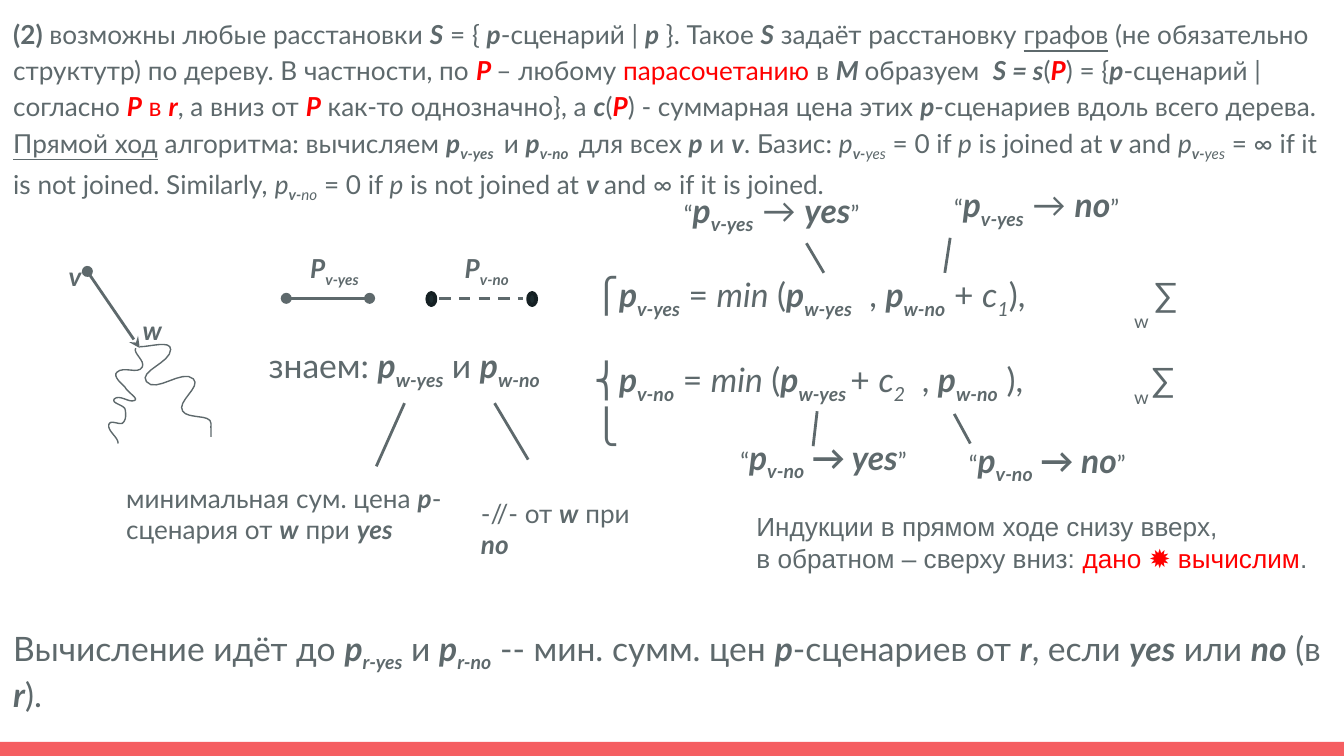
from dataclasses import dataclass

from lxml import etree
from pptx import Presentation
from pptx.dml.color import RGBColor
from pptx.enum.dml import MSO_LINE
from pptx.enum.shapes import MSO_CONNECTOR, MSO_SHAPE
from pptx.oxml.ns import qn
from pptx.util import Inches, Pt

STRAIGHT = MSO_CONNECTOR.STRAIGHT
RECTANGLE = MSO_SHAPE.RECTANGLE
OVAL = MSO_SHAPE.OVAL
DASH = MSO_LINE.DASH


@dataclass(frozen=True)
class Theme:
    """Colours, fonts and type sizes of the slide."""
    ink: RGBColor = RGBColor(0x5E, 0x69, 0x6C)
    red: RGBColor = RGBColor(0xFF, 0x00, 0x00)
    bar: RGBColor = RGBColor(0xF5, 0x5E, 0x61)
    dot: RGBColor = RGBColor(0x1E, 0x2D, 0x31)
    dot_edge: RGBColor = RGBColor(0x15, 0x20, 0x23)
    font: str = "Lato"
    note_font: str = "Arial"
    large: Pt = Pt(18)
    body: Pt = Pt(14)
    quote: Pt = Pt(13)
    small: Pt = Pt(10)


THEME = Theme()

MARKS = {
    "*": {"bold", "italic"},
    "%": {"bold"},
    "`": {"italic"},
    "_": {"subscript"},
    "~": {"underline"},
    "#": {"red"},
    "@": {"quote"},
}

INTRO = [
    "%(2)% возможны любые расстановки *S* = { *p*-сценарий | *p* }. Такое *S* задаёт расстановку "
    "~графов~ (не обязательно структутр) по дереву. В частности, по #*P *#– любому "
    "#парасочетанию# в *M *образуем  *S = s*(#*P*#) = {*p*-сценарий | согласно #*P* в *r*#, "
    "а вниз от #*P*# как-то однозначно}, а *c*(#*P*#) - суммарная цена этих "
    "*p*-сценариев вдоль всего дерева.",
    "~Прямой ход~ алгоритма: вычисляем *p_v-yes _* и *p_v-no _* для всех *p* и *v*. Базис: "
    "`p_%v-%yes_` = 0 if `p` is joined at *v* and `p_%v-%yes_` = ∞ if it is not joined. "
    "Similarly, `p_%v-%no_` = 0 if `p` is not joined at *v *and ∞ if it is joined.",
]
FORMULAS = [
    ("⎧*p_v-yes_* = `min` (*p_w-yes_*\t, *p_w-no_* + `c_1_`),\t∑", 0, (2.05, 4.17)),
    ("⎨*p_v-no_* = `min` (*p_w-yes _*+ `c_2_`\t, *p_w-no_* ),\t∑", 21.5, (2.44, 4.15)),
    ("⎩", 0, ()),
]
CONCLUSION = ("Вычисление идёт до *p_r-yes_* и *p_r-no_* -- мин. сумм. цен *p*-сценариев от *r*, "
              "если *yes* или *no* (в *r*).")
NOTE = ["Индукции в прямом ходе снизу вверх,",
        "в обратном – сверху вниз: #дано ✹ вычислим#."]

LABELS = [
    (0.43, 1.84, 0.18, 0.44, "*v*", THEME.body),
    (0.98, 2.24, 0.18, 0.44, "*w*", THEME.body),
    (2.21, 1.78, 0.66, 0.44, "*P_v-yes_*", THEME.body),
    (3.36, 1.78, 0.64, 0.44, "*P_v-no_*", THEME.body),
    (8.34, 2.22, 0.53, 0.37, "w", THEME.small),
    (8.34, 2.79, 0.62, 0.37, "w", THEME.small),
    (4.99, 1.31, 1.59, 0.5, "@“@*p_v-yes_* → *yes*@”@", THEME.large),
    (7, 1.27, 1.59, 0.5, "@“@*p_v-yes_* → *no*@”@", THEME.large),
    (5.41, 3.15, 1.59, 0.5, "@“@*p_v-no_ → yes*@”@", THEME.large),
    (7.11, 3.17, 1.59, 0.5, "@“@*p_v-no_ → no*@”@", THEME.large),
    (1.9, 2.47, 2.36, 0.5, "знаем: *p_w-yes_* и *p_w-no_*", THEME.large),
    (0.84, 3.49, 2.63, 0.67, "минимальная сум. цена *p*-сценария от *w* при *yes*", THEME.body),
    (3.48, 3.6, 1.51, 0.44, "-//- от *w* при *no*", THEME.body),
    (0, 4.57, 9.99, 0.81, CONCLUSION, THEME.large),
]
POINTERS = [
    (6, 1.81, 6.13, 2.03), (7.07, 1.77, 7.03, 2.03),
    (6.08, 3.06, 6.05, 3.32), (7.1, 3.08, 7.22, 3.3),
    (3.01, 3, 2.8, 3.47), (3.68, 3, 3.93, 3.42),
]
RIGHT_BRANCH = [
    (1.04, 2.58), (1.12, 2.58), (1.27, 2.53), (1.27, 2.6), (1.27, 2.7), (1.03, 2.76), (1.09, 2.84),
    (1.16, 2.93), (1.36, 2.74), (1.44, 2.82), (1.5, 2.88), (1.31, 2.99), (1.36, 3.06),
    (1.4, 3.12), (1.57, 3.08), (1.57, 3.15), (1.57, 3.19), (1.57, 3.22), (1.57, 3.25),
]
LEFT_BRANCH = [
    (1.01, 2.59), (0.99, 2.63), (1.08, 2.68), (1.06, 2.73), (1.03, 2.79), (0.92, 2.72), (0.87, 2.77),
    (0.84, 2.8), (0.9, 2.85), (0.93, 2.88), (0.95, 2.92), (1.04, 2.97), (1, 2.98),
    (0.96, 3), (0.89, 2.93), (0.85, 2.97), (0.83, 3), (0.91, 3.01), (0.93, 3.04),
    (0.94, 3.08), (0.94, 3.13), (0.91, 3.15), (0.88, 3.16), (0.82, 3.12), (0.81, 3.16),
    (0.8, 3.21), (0.88, 3.25), (0.88, 3.3),
]


def split_markup(text):
    """Yield each stretch of marked text with its set of active styles."""
    active, stretch = set(), ""
    for character in text:
        if character in MARKS:
            if stretch:
                yield stretch, active
            active, stretch = active ^ MARKS[character], ""
        else:
            stretch += character
    if stretch:
        yield stretch, active


def write_paragraph(paragraph, text, size, font=THEME.font):
    """Fill a paragraph with the runs of a marked text."""
    paragraph.font.name = font
    paragraph.font.size = size
    paragraph.font.color.rgb = THEME.ink
    for stretch, styles in split_markup(text):
        run = paragraph.add_run()
        run.text = stretch
        for style in styles & {"bold", "italic", "underline"}:
            setattr(run.font, style, True)
        if "red" in styles:
            run.font.color.rgb = THEME.red
        if "quote" in styles:
            run.font.size = THEME.quote
        if "subscript" in styles:
            run.font._element.set("baseline", "-25000")


def add_text(slide, left, top, width, height, texts, size, font=THEME.font, margin=0.1):
    """Add a wrapped text box and return its paragraphs."""
    frame = slide.shapes.add_textbox(Inches(left), Inches(top), Inches(width), Inches(height)).text_frame
    frame.word_wrap = True
    frame.margin_left = frame.margin_right = Inches(0.1)
    frame.margin_top = frame.margin_bottom = Inches(margin)
    for index, text in enumerate(texts):
        paragraph = frame.add_paragraph() if index else frame.paragraphs[0]
        write_paragraph(paragraph, text, size, font)
    return frame.paragraphs


def set_tab_stops(paragraph, stops):
    """Give a paragraph left tab stops, in inches."""
    properties = paragraph._p.get_or_add_pPr()
    tabs = etree.Element(qn("a:tabLst"))
    for stop in stops:
        etree.SubElement(tabs, qn("a:tab"), pos=str(Inches(stop)), algn="l")
    properties.find(qn("a:defRPr")).addprevious(tabs)


def add_formulas(slide):
    """Add the braced pair of recurrences."""
    texts = [text for text, _, _ in FORMULAS]
    paragraphs = add_text(slide, 4.32, 1.94, 5.67, 1.41, texts, THEME.large)
    paragraphs[0].line_spacing = 0.98
    for paragraph, (_, gap, stops) in zip(paragraphs, FORMULAS):
        paragraph.space_before = Pt(gap)
        if stops:
            set_tab_stops(paragraph, stops)


def add_line(slide, ends, head=None, tail=None, dash=None):
    """Add a straight line with optional end marks and dash."""
    connector = slide.shapes.add_connector(STRAIGHT, *map(Inches, ends))
    connector.line.color.rgb = THEME.ink
    connector.line.width = Pt(1.5)
    if dash:
        connector.line.dash_style = dash
    outline = connector.line._get_or_add_ln()
    for tag, kind in (("a:headEnd", head), ("a:tailEnd", tail)):
        if kind:
            etree.SubElement(outline, qn(tag), type=kind)
    etree.SubElement(connector._element.spPr, qn("a:effectLst"))


def add_curve(slide, points, steps=8):
    """Draw a chain of cubic curves as a fine open outline."""
    track = [points[0]]
    for first in range(0, len(points) - 1, 3):
        a, b, c, d = points[first:first + 4]
        for step in range(1, steps + 1):
            t = step / steps
            weights = ((1 - t) ** 3, 3 * t * (1 - t) ** 2, 3 * t * t * (1 - t), t ** 3)
            track.append(tuple(sum(w * p[axis] for w, p in zip(weights, (a, b, c, d))) for axis in (0, 1)))
    track = [(Inches(x), Inches(y)) for x, y in track]
    builder = slide.shapes.build_freeform(*track[0])
    builder.add_line_segments(track[1:], close=False)
    shape = builder.convert_to_shape()
    shape.shadow.inherit = False
    shape.fill.background()
    shape.line.color.rgb = THEME.ink
    shape.line.width = Pt(0.75)


def add_solid(slide, kind, left, top, width, height, fill, edge=None):
    """Add a filled preset shape, outlined if an edge colour is given."""
    shape = slide.shapes.add_shape(kind, Inches(left), Inches(top), Inches(width), Inches(height))
    shape.shadow.inherit = False
    shape.fill.solid()
    shape.fill.fore_color.rgb = fill
    if edge is None:
        shape.line.fill.background()
    else:
        shape.line.color.rgb = edge
        shape.line.width = Pt(2)


def main():
    """Build the slide and save it."""
    presentation = Presentation()
    presentation.slide_width = Inches(10)
    presentation.slide_height = Inches(10) * 9 // 16
    slide = presentation.slides.add_slide(presentation.slide_layouts[6])

    add_solid(slide, RECTANGLE, 0, 5.52, 10, 0.11, THEME.bar)
    for paragraph in add_text(slide, 0, 0, 9.99, 1.55, INTRO, THEME.body):
        paragraph.line_spacing = 1.15

    add_line(slide, (0.65, 2.02, 1.04, 2.59), head="oval", tail="stealth")
    for branch in (RIGHT_BRANCH, LEFT_BRANCH):
        add_curve(slide, branch)
    add_line(slide, (2.13, 2.22, 2.75, 2.22), head="oval", tail="oval")
    add_line(slide, (3.27, 2.22, 3.89, 2.22), dash=DASH)
    for left in (3.18, 3.93):
        add_solid(slide, OVAL, left, 2.18, 0.06, 0.09, THEME.dot, THEME.dot_edge)

    add_formulas(slide)
    for pointer in POINTERS:
        add_line(slide, pointer)
    for left, top, width, height, text, size in LABELS:
        add_text(slide, left, top, width, height, [text], size)
    add_text(slide, 5.53, 3.75, 4.47, 0.57, NOTE, THEME.body, THEME.note_font, 0.05)
    presentation.save("out.pptx")


if __name__ == "__main__":
    main()
